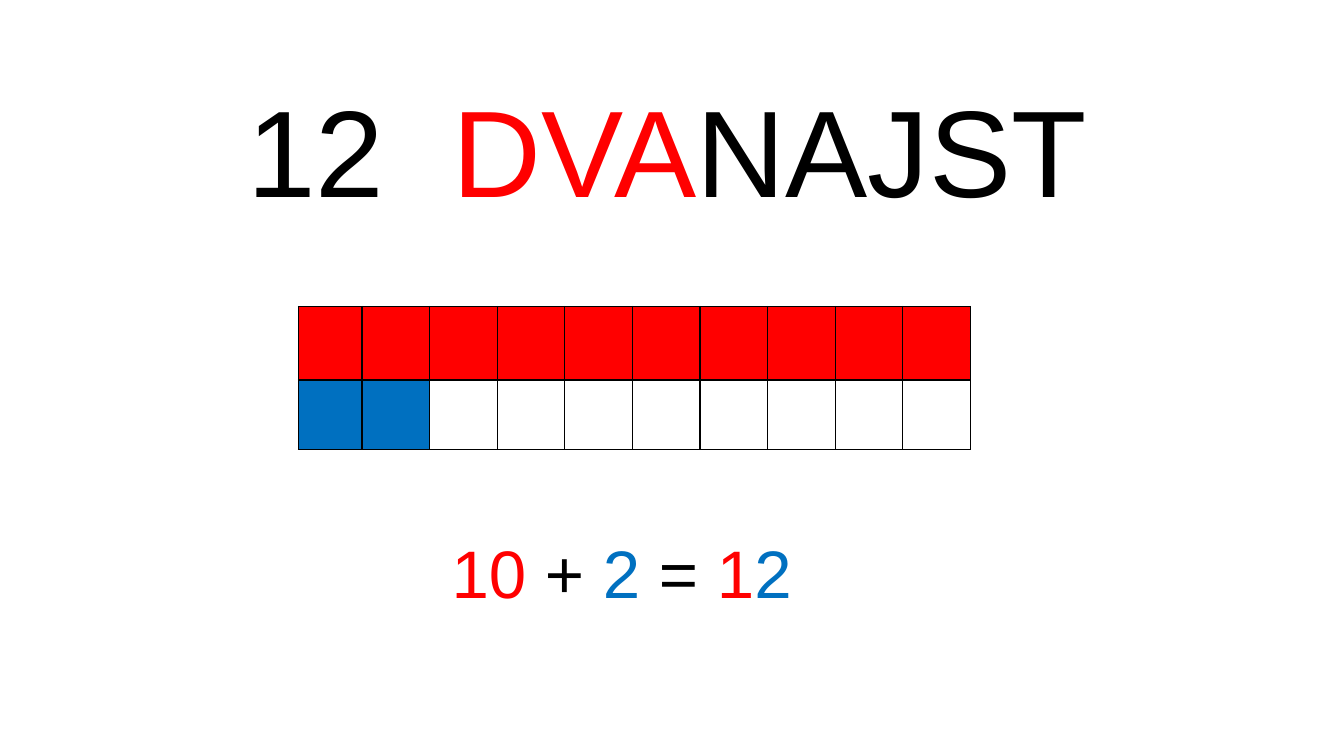
from dataclasses import dataclass
from typing import NamedTuple

from lxml import etree
from pptx import Presentation, util as u
from pptx.dml.color import RGBColor
from pptx.enum import text
from pptx.oxml import ns


@dataclass(frozen=True)
class Theme:
    font: str = "Arial"
    black: str = "000000"
    tens: str = "FF0000"
    ones: str = "0070C0"
    title_size: int = 88
    equation_size: int = 48
    border_width: int = 1


class Area(NamedTuple):
    """A place on the slide, in percent of its width and height."""
    left: float
    top: float
    width: float
    height: float


class Piece(NamedTuple):
    words: str
    color: str


THEME = Theme()
SLIDE_WIDTH, SLIDE_HEIGHT = u.Inches(13.33), u.Inches(7.5)
TITLE_AREA = Area(17.63, 9.2, 73.07, 21.07)
FRAME_AREA = Area(22.2, 40.53, 50, 18.93)
EQUATION_AREA = Area(32.86, 69.6, 28.66, 12.13)

COLUMN_SHARES = [4.73] + [5.03] * 9
ROW_SHARES = [9.73, 9.2]
ROW_COUNTERS = [(10, THEME.tens), (2, THEME.ones)]

TITLE = [Piece("12  ", THEME.black), Piece("DVA", THEME.tens), Piece("NAJST", THEME.black)]
EQUATION = [
    Piece("10", THEME.tens), Piece(" + ", THEME.black), Piece("2", THEME.ones),
    Piece(" = ", THEME.black), Piece("1", THEME.tens), Piece("2", THEME.ones),
]


def across(share: float) -> int:
    return round(SLIDE_WIDTH * share / 100)


def down(share: float) -> int:
    return round(SLIDE_HEIGHT * share / 100)


def place(area: Area) -> tuple[int, int, int, int]:
    return across(area.left), down(area.top), across(area.width), down(area.height)


def write_text(shape, pieces: list[Piece], *, size: int, font: str = THEME.font) -> None:
    frame = shape.text_frame
    frame.word_wrap = True
    frame.auto_size = text.MSO_AUTO_SIZE.SHAPE_TO_FIT_TEXT
    frame.vertical_anchor = text.MSO_ANCHOR.TOP
    paragraph = frame.paragraphs[0]
    paragraph.alignment = text.PP_ALIGN.LEFT
    for piece in pieces:
        run = paragraph.add_run()
        run.text = piece.words
        run.font.name = font
        run.font.size = u.Pt(size)
        run.font.color.rgb = RGBColor.from_string(piece.color)


def add_borders(cell) -> None:
    """Outline a cell; call before its fill is set, as lines come first in tcPr."""
    properties = cell._tc.get_or_add_tcPr()
    for side in ("a:lnL", "a:lnR", "a:lnT", "a:lnB"):
        line = etree.SubElement(properties, ns.qn(side), w=str(u.Pt(THEME.border_width)))
        fill = etree.SubElement(line, ns.qn("a:solidFill"))
        etree.SubElement(fill, ns.qn("a:srgbClr"), val=THEME.black)


def add_counting_frame(slide) -> None:
    table = slide.shapes.add_table(
        len(ROW_SHARES), len(COLUMN_SHARES), *place(FRAME_AREA)).table
    table.first_row = table.horz_banding = False
    for column, share in zip(table.columns, COLUMN_SHARES):
        column.width = across(share)
    for row, share, (count, color) in zip(table.rows, ROW_SHARES, ROW_COUNTERS):
        row.height = down(share)
        for position, cell in enumerate(row.cells):
            add_borders(cell)
            if position < count:
                cell.fill.solid()
                cell.fill.fore_color.rgb = RGBColor.from_string(color)
            else:
                cell.fill.background()


def main() -> None:
    presentation = Presentation()
    presentation.slide_width, presentation.slide_height = SLIDE_WIDTH, SLIDE_HEIGHT
    slide = presentation.slides.add_slide(presentation.slide_layouts.get_by_name("Title Only"))

    title = slide.shapes.title
    title.left, title.top, title.width, title.height = place(TITLE_AREA)
    write_text(title, TITLE, size=THEME.title_size)
    add_counting_frame(slide)
    equation = slide.shapes.add_textbox(*place(EQUATION_AREA))
    write_text(equation, EQUATION, size=THEME.equation_size)

    presentation.save("out.pptx")


if __name__ == "__main__":
    main()
